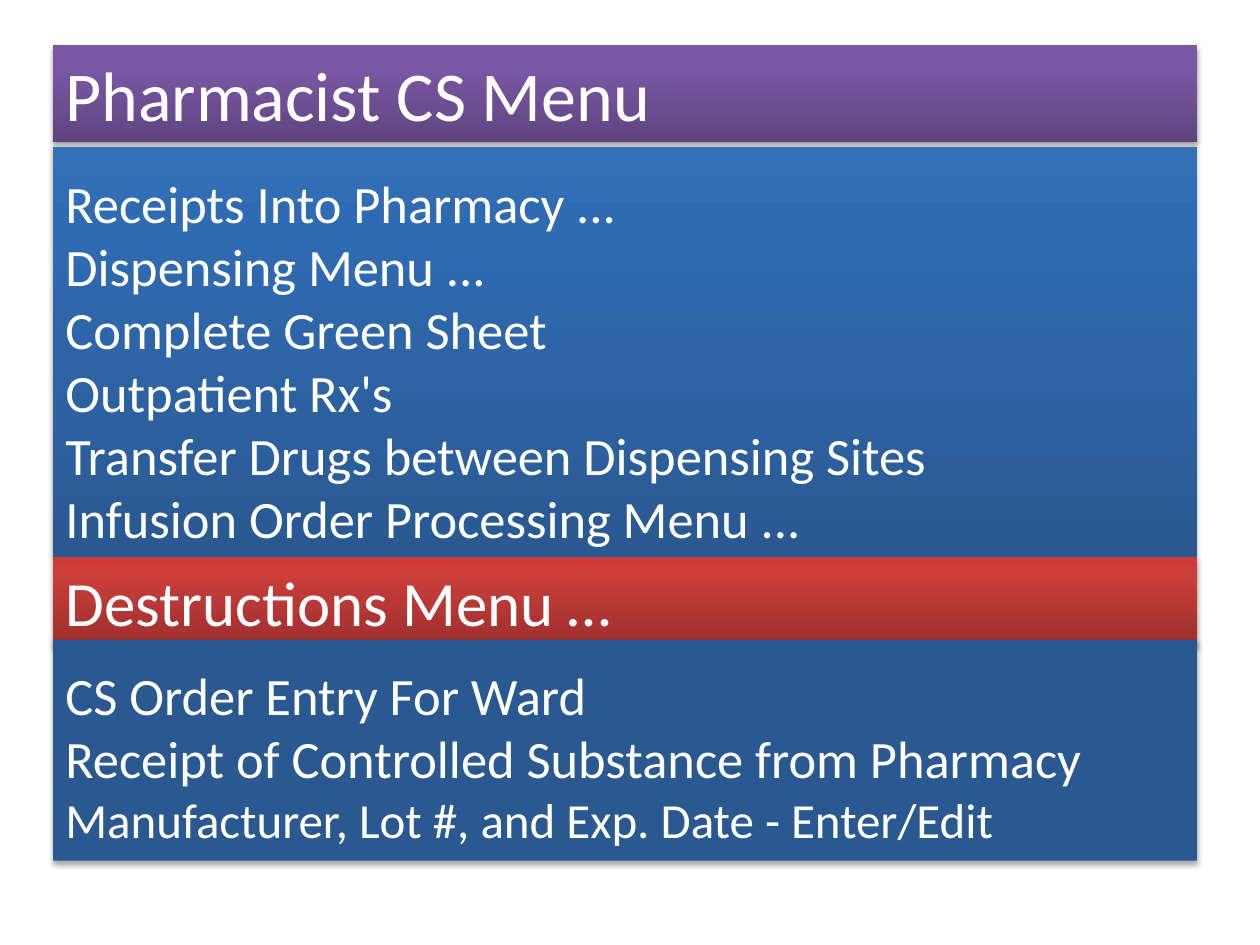
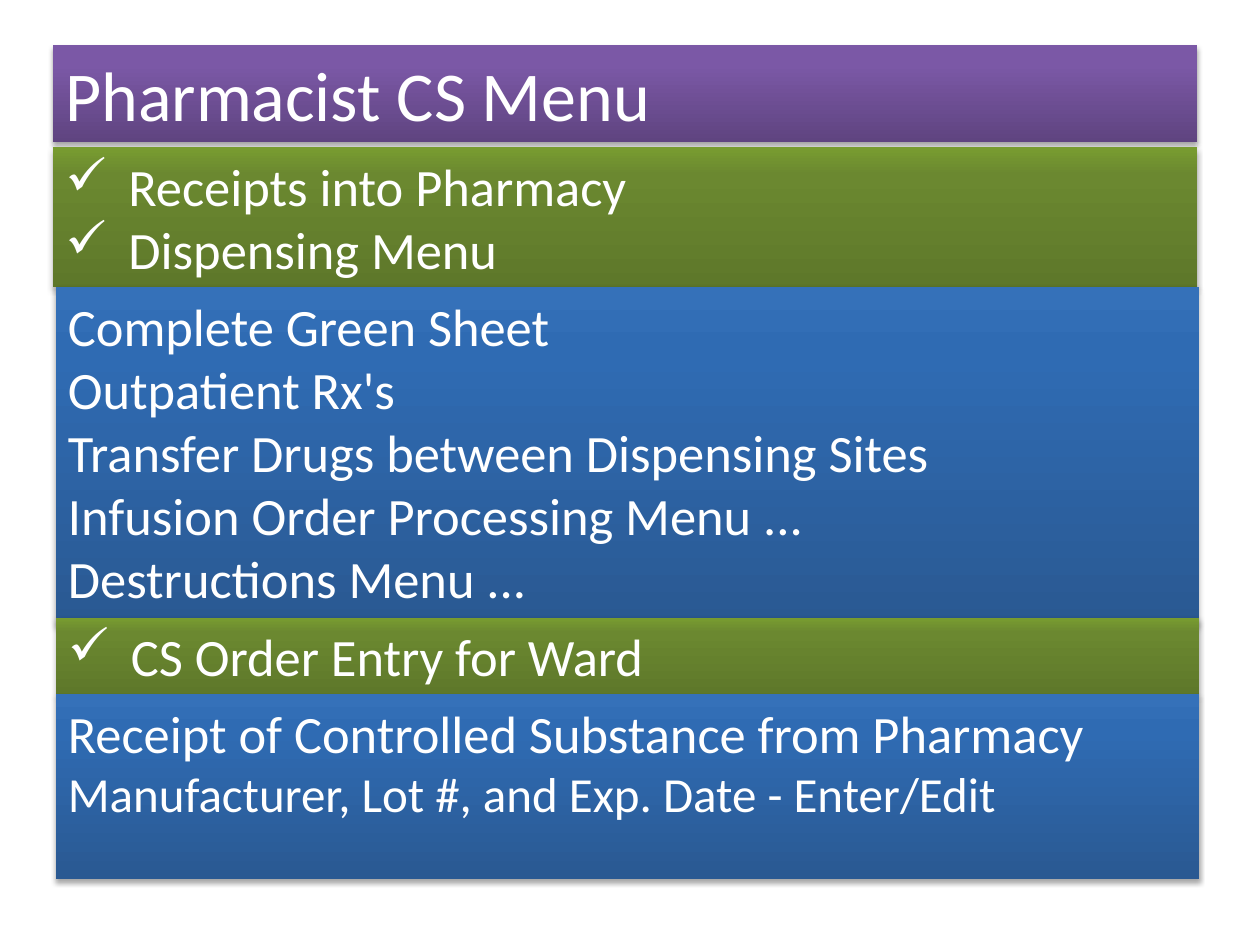
from copy import deepcopy

from lxml.etree import SubElement
from pptx import Presentation
from pptx.dml.color import RGBColor
from pptx.enum.shapes import MSO_SHAPE
from pptx.enum.text import MSO_ANCHOR, PP_ALIGN
from pptx.oxml.ns import qn
from pptx.util import Cm, Pt

# Shared look
FONT = "Calibri"
WHITE = RGBColor(0xFF, 0xFF, 0xFF)
DARK_BLUE = RGBColor(0x2A, 0x59, 0x92)
# Gradients run from the bottom edge to the top edge
PURPLE = (RGBColor(0x5F, 0x44, 0x80), RGBColor(0x7B, 0x58, 0xA6), RGBColor(0x7C, 0x57, 0xA8))
BLUE = (DARK_BLUE, RGBColor(0x2F, 0x6B, 0xB3), RGBColor(0x35, 0x71, 0xB9))
RED = (RGBColor(0x9C, 0x2F, 0x2D), RGBColor(0xCB, 0x3E, 0x3A), RGBColor(0xCE, 0x3B, 0x37))
GREEN = (RGBColor(0x5E, 0x78, 0x2A), RGBColor(0x6B, 0x88, 0x30), RGBColor(0x78, 0x9C, 0x30))
STOPS = (0, 0.8, 1)

LEFT, SHIFTED_LEFT, WIDTH = Cm(1.07), Cm(1.12), Cm(23.06)
INSET, DEEP_INSET = Cm(0.13), Cm(0.47)
ITEM_SIZE, LAST_ITEM_SIZE = 30, 28

# Menu items that appear on both slides
MIDDLE_ITEMS = [
    "Complete Green Sheet",
    "Outpatient Rx's",
    "Transfer Drugs between Dispensing Sites",
    "Infusion Order Processing Menu ...",
]
FINAL_ITEMS = [
    "Receipt of Controlled Substance from Pharmacy",
    "Manufacturer, Lot #, and Exp. Date - Enter/Edit",
]


def fill_gradient(sp, colors):
    sp.fill.gradient()
    sp.fill.gradient_angle = 90
    stop_list = sp._element.spPr.find(qn("a:gradFill")).find(qn("a:gsLst"))
    stop_list.append(deepcopy(stop_list[-1]))
    for stop, position, color in zip(sp.fill.gradient_stops, STOPS, colors):
        stop.position = position
        stop.color.rgb = color


def add_shadow(sp):
    sp.shadow.inherit = False
    effects = sp._element.spPr.find(qn("a:effectLst"))
    shadow = SubElement(effects, qn("a:outerShdw"), blurRad=str(Pt(3.1)),
                        dist=str(Pt(1.8)), dir="5400000", rotWithShape="0")
    color = SubElement(shadow, qn("a:srgbClr"), val="000000")
    SubElement(color, qn("a:alpha"), val="35000")


def add_check(p):
    pPr = p._p.get_or_add_pPr()
    pPr.set("marL", str(Cm(1.27)))
    pPr.set("indent", str(-Cm(1.27)))
    SubElement(pPr, qn("a:buChar"), char="✓")


def add_band(s, top, height, fill, lines, size=ITEM_SIZE, left=LEFT,
             inset=INSET, checked=False):
    """Add a full-width band with one paragraph per menu line."""
    sp = s.shapes.add_shape(MSO_SHAPE.RECTANGLE, left, Cm(top), WIDTH, Cm(height))
    if isinstance(fill, RGBColor):
        sp.fill.solid()
        sp.fill.fore_color.rgb = fill
    else:
        fill_gradient(sp, fill)
    sp.line.fill.background()
    add_shadow(sp)

    tf = sp.text_frame
    tf.word_wrap = True
    tf.vertical_anchor = MSO_ANCHOR.TOP
    tf.margin_top = inset
    tf.text = "\n".join(lines)
    for p in tf.paragraphs:
        p.alignment = PP_ALIGN.LEFT
        if checked:
            add_check(p)
        font = p.runs[0].font
        font.name = FONT
        font.size = Pt(LAST_ITEM_SIZE if p.text == FINAL_ITEMS[-1] else size)
        font.color.rgb = WHITE


def add_menu_slide(prs):
    """Add a blank slide with the menu title band."""
    s = prs.slides.add_slide(prs.slide_layouts[6])
    add_band(s, 0.91, 1.96, PURPLE, ["Pharmacist CS Menu"], size=40)
    return s


def add_destructions_slide(prs):
    s = add_menu_slide(prs)
    first_items = ["Receipts Into Pharmacy ...", "Dispensing Menu ..."]
    add_band(s, 2.97, 8.26, BLUE, first_items + MIDDLE_ITEMS, inset=DEEP_INSET)
    add_band(s, 11.23, 1.8, RED, ["Destructions Menu …"], size=36)
    add_band(s, 12.9, 4.45, DARK_BLUE, ["CS Order Entry For Ward"] + FINAL_ITEMS,
             inset=DEEP_INSET)


def add_progress_slide(prs):
    s = add_menu_slide(prs)
    add_band(s, 2.97, 2.82, GREEN, ["Receipts into Pharmacy", "Dispensing Menu"],
             checked=True)
    add_band(s, 5.79, 6.83, BLUE, MIDDLE_ITEMS + ["Destructions Menu ..."],
             left=SHIFTED_LEFT)
    add_band(s, 12.45, 1.55, GREEN, ["CS Order Entry for Ward"],
             left=SHIFTED_LEFT, checked=True)
    add_band(s, 14, 3.73, BLUE, FINAL_ITEMS, left=SHIFTED_LEFT)


def main():
    prs = Presentation()
    prs.slide_width, prs.slide_height = Cm(25.4), Cm(19.05)
    add_destructions_slide(prs)
    add_progress_slide(prs)
    prs.save("out.pptx")


if __name__ == "__main__":
    main()
